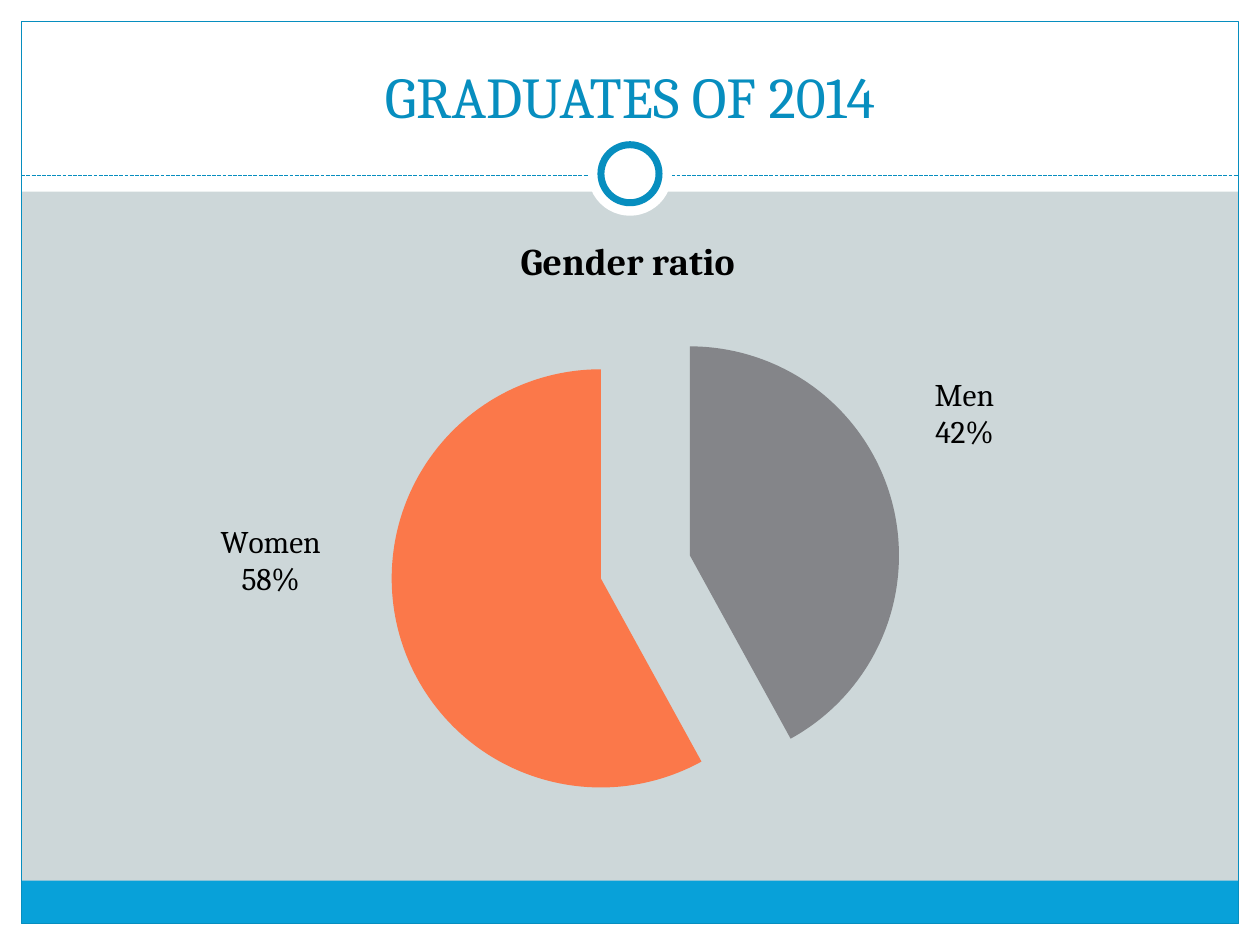
from dataclasses import dataclass

from lxml.etree import SubElement
from pptx import Presentation
from pptx.chart.data import CategoryChartData
from pptx.dml.color import RGBColor as Rgb
from pptx.enum.chart import XL_CHART_TYPE as ChartType, XL_LABEL_POSITION as LabelPosition
from pptx.enum.dml import MSO_LINE as Dash
from pptx.enum.shapes import MSO_CONNECTOR as Connector, MSO_SHAPE as Shape
from pptx.enum.text import MSO_ANCHOR as Anchor, PP_ALIGN as Align
from pptx.oxml import parse_xml
from pptx.oxml.ns import nsdecls, qn
from pptx.util import Pt


@dataclass(frozen=True)
class Theme:
    font: str = "Cambria"
    background: Rgb = Rgb.from_string("CDD7D9")
    white: Rgb = Rgb.from_string("FFFFFF")
    black: Rgb = Rgb.from_string("000000")
    accent: Rgb = Rgb.from_string("078EBF")
    footer: Rgb = Rgb.from_string("08A1D9")
    men: Rgb = Rgb.from_string("848589")
    women: Rgb = Rgb.from_string("FB784A")
    title_size: float = 33
    chart_title_size: float = 21.6
    label_size: float = 18
    thin: float = 0.75
    ring: float = 4


THEME = Theme()
WIDTH, HEIGHT, MARGIN = 720, 540, 12.2
HEADER_HEIGHT, DIVIDER_Y, FOOTER_HEIGHT = 109.5, 100.5, 24.5
RING_Y = 99.3


def style_font(font, size, color, bold=False):
    values = {"name": THEME.font, "size": Pt(size), "bold": bold}
    for name, value in values.items():
        setattr(font, name, value)
    font.color.rgb = color


def add_block(page, kind, bounds, fill=None, line_width=0):
    shape = page.shapes.add_shape(kind, *map(Pt, bounds))
    shape.shadow.inherit = False
    if fill is None:
        shape.fill.background()
    else:
        shape.fill.solid()
        shape.fill.fore_color.rgb = fill
    if line_width:
        shape.line.color.rgb = THEME.accent
        shape.line.width = Pt(line_width)
    else:
        shape.line.fill.background()


def add_circle(page, diameter, line_width=0):
    """Add a white circle centred on the ring position."""
    bounds = (WIDTH - diameter) / 2, RING_Y - diameter / 2, diameter, diameter
    add_block(page, Shape.OVAL, bounds, THEME.white, line_width)


def add_divider(page):
    ends = MARGIN, DIVIDER_Y, WIDTH - MARGIN, DIVIDER_Y
    line = page.shapes.add_connector(Connector.STRAIGHT, *map(Pt, ends))
    line.line.color.rgb = THEME.accent
    line.line.width = Pt(THEME.thin)
    line.line.dash_style = Dash.SQUARE_DOT
    SubElement(line._element.spPr, qn("a:effectLst"))


def add_frame(page):
    inner_width, inner_height = WIDTH - 2 * MARGIN, HEIGHT - 2 * MARGIN
    bottom = HEIGHT - MARGIN
    for bounds in (
        (0, bottom, WIDTH, MARGIN),
        (0, 0, WIDTH, HEADER_HEIGHT),
        (0, 0, MARGIN, HEIGHT),
        (WIDTH - MARGIN, 0, MARGIN, HEIGHT),
    ):
        add_block(page, Shape.RECTANGLE, bounds, THEME.white)
    footer = MARGIN, bottom - FOOTER_HEIGHT, inner_width, FOOTER_HEIGHT
    add_block(page, Shape.RECTANGLE, footer, THEME.footer)
    border = MARGIN, MARGIN, inner_width, inner_height
    add_block(page, Shape.RECTANGLE, border, line_width=THEME.thin)
    add_divider(page)
    add_circle(page, 48)
    add_circle(page, 33.2, THEME.ring)


def add_title(page, text):
    box = page.shapes.add_textbox(Pt(24), Pt(18), Pt(672), Pt(60))
    frame = box.text_frame
    frame.word_wrap = True
    frame.vertical_anchor = Anchor.BOTTOM
    para = frame.paragraphs[0]
    para.alignment = Align.CENTER
    span = para.add_run()
    span.text = text
    style_font(span.font, THEME.title_size, THEME.accent)


def manual_layout(**values):
    """Build a chart layout from the given manualLayout settings."""
    layout = parse_xml(f"<c:layout {nsdecls('c')}><c:manualLayout/></c:layout>")
    for name, value in values.items():
        SubElement(layout[0], qn(f"c:{name}")).set("val", str(value))
    return layout


def place_label(series, index, dx, dy):
    """Show category and percentage, moved by a fraction of the chart size."""
    series.points[index].data_label.position = LabelPosition.OUTSIDE_END
    label = series._element.findall(".//" + qn("c:dLbl"))[index]
    label.find(qn("c:idx")).addnext(manual_layout(x=dx, y=dy))
    for name, shown in {"showVal": 0, "showCatName": 1, "showPercent": 1}.items():
        label.find(qn(f"c:{name}")).set("val", str(shown))
    separator = SubElement(label, qn("c:separator"))
    separator.text = "\n"


def hide_leader_lines(series):
    labels = series._element.find(qn("c:dLbls"))
    leader = labels.find(qn("c:showLeaderLines"))
    if leader is None:
        leader = SubElement(labels, qn("c:showLeaderLines"))
    leader.set("val", "0")


def add_pie(page):
    data = CategoryChartData()
    data.categories = ["Men", "Women"]
    data.add_series("Gender ratio", (42, 58))
    bounds = map(Pt, (24, 120.6, 669.6, 360))
    chart = page.shapes.add_chart(ChartType.PIE, *bounds, data).chart
    style_font(chart.font, THEME.label_size, THEME.black)
    chart.has_legend = False
    chart.has_title = True
    para = chart.chart_title.text_frame.paragraphs[0]
    span = para.add_run()
    span.text = "Gender ratio"
    style_font(span.font, THEME.chart_title_size, THEME.black, bold=True)

    plot = chart.plots[0]
    plot.vary_by_categories = True
    series = plot.series[0]
    for index, color in enumerate((THEME.men, THEME.women)):
        fill = series.points[index].format.fill
        fill.solid()
        fill.fore_color.rgb = color
    explosion = parse_xml(f'<c:explosion {nsdecls("c")} val="22"/>')
    series._element.find(qn("c:dPt")).addprevious(explosion)
    for index, shift in enumerate(((0.03, -0.08), (-0.06, -0.17))):
        place_label(series, index, *shift)
    hide_leader_lines(series)

    area = plot._element.getparent()
    for layout in area.findall(qn("c:layout")):
        area.remove(layout)
    area.insert(0, manual_layout(
        layoutTarget="inner", xMode="edge", yMode="edge",
        x=0.29, y=0.16, w=0.45, h=0.81,
    ))


def main():
    deck = Presentation()
    deck.slide_width, deck.slide_height = Pt(WIDTH), Pt(HEIGHT)
    page = deck.slides.add_slide(deck.slide_layouts[6])
    page.background.fill.solid()
    page.background.fill.fore_color.rgb = THEME.background
    add_frame(page)
    add_title(page, "GRADUATES OF 2014")
    add_pie(page)
    deck.save("out.pptx")


if __name__ == "__main__":
    main()
